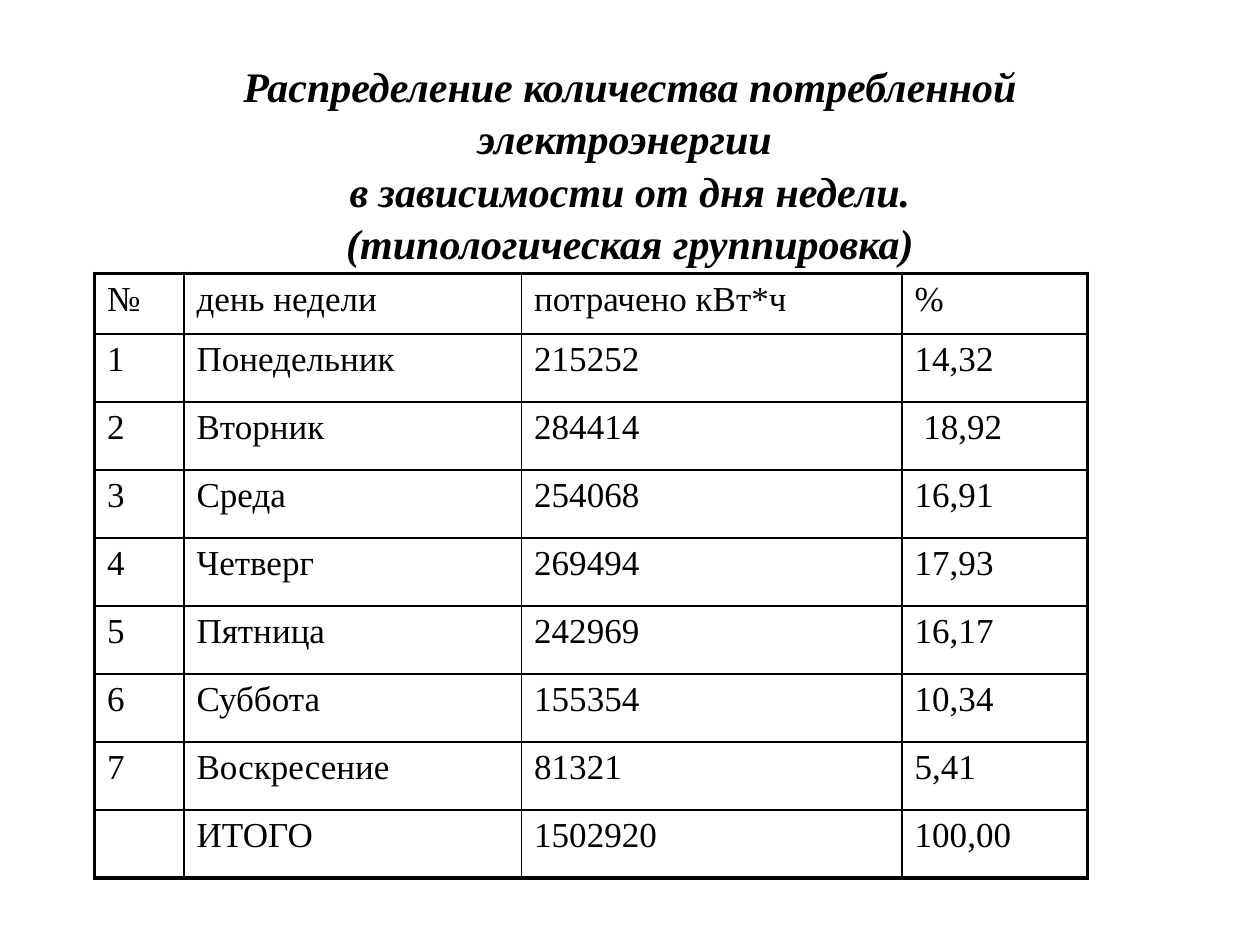
import pptx
import pptx.util
import pptx.dml.color
import pptx.enum.text
from lxml import etree
from pptx.oxml.ns import qn
from pptx.util import Inches, Pt

TITLE_LINES = (
    "Распределение количества потребленной электроэнергии ",
    "в зависимости от дня недели.",
    "(типологическая группировка)",
)
ROWS = [
    ("№", "день недели", "потрачено кВт*ч", "%"),
    ("1", "Понедельник", "215252", "14,32"),
    ("2", "Вторник", "284414", " 18,92"),
    ("3", "Среда", "254068", "16,91"),
    ("4", "Четверг", "269494", "17,93"),
    ("5", "Пятница", "242969", "16,17"),
    ("6", "Суббота", "155354", "10,34"),
    ("7", "Воскресение", "81321", "5,41"),
    ("", "ИТОГО", "1502920", "100,00"),
]
COLUMN_WIDTHS = (0.71, 2.68, 3.02, 1.47)
HEADER_HEIGHT, DAY_HEIGHT = 0.48, 0.54
OUTER_LINE, INNER_LINE = 2.25, 1
COLORS = {"ink": "000000"}
FONT = "Times New Roman"


def style_font(font, size):
    font.name = FONT
    font.size = Pt(size)
    font.color.rgb = pptx.dml.color.RGBColor.from_string(COLORS["ink"])


def set_borders(cell, widths):
    """Draw cell borders; widths maps the side letters L, R, T, B to points."""
    properties = cell._tc.get_or_add_tcPr()
    for position, (side, width) in enumerate(widths.items()):
        line = etree.Element(qn(f"a:ln{side}"), w=str(int(Pt(width))))
        fill = etree.SubElement(line, qn("a:solidFill"))
        etree.SubElement(fill, qn("a:srgbClr"), val=COLORS["ink"])
        properties.insert(position, line)


def add_title(slide):
    title = slide.shapes.title
    title.left, title.top = Inches(0.75), Inches(0.67)
    title.width, title.height = Inches(8.5), Inches(1.25)
    frame = title.text_frame
    frame.auto_size = pptx.enum.text.MSO_AUTO_SIZE.NONE
    frame.vertical_anchor = pptx.enum.text.MSO_ANCHOR.MIDDLE
    frame.text = "\v".join(TITLE_LINES)
    heading = frame.paragraphs[0]
    heading.alignment = pptx.enum.text.PP_ALIGN.CENTER
    heading.line_spacing = 1.04
    style_font(heading.font, 24)
    heading.font.bold = heading.font.italic = True


def add_consumption_table(slide):
    heights = [HEADER_HEIGHT] + [DAY_HEIGHT] * (len(ROWS) - 1)
    table = slide.shapes.add_table(
        len(ROWS), len(COLUMN_WIDTHS), Inches(0.75), Inches(2.17),
        Inches(sum(COLUMN_WIDTHS)), Inches(sum(heights))).table
    table.first_row = table.horz_banding = False
    for column, width in zip(table.columns, COLUMN_WIDTHS):
        column.width = Inches(width)
    for row, height in zip(table.rows, heights):
        row.height = Inches(height)

    last_row, last_column = len(ROWS) - 1, len(COLUMN_WIDTHS) - 1
    for r, values in enumerate(ROWS):
        for c, value in enumerate(values):
            cell = table.cell(r, c)
            cell.text = value
            style_font(cell.text_frame.paragraphs[0].font, 20)
            cell.fill.background()
            on_edge = {"L": c == 0, "R": c == last_column,
                       "T": r == 0, "B": r == last_row}
            set_borders(cell, {side: OUTER_LINE if outer else INNER_LINE
                               for side, outer in on_edge.items()})


def main():
    deck = pptx.Presentation()
    deck.slide_width, deck.slide_height = Inches(10), Inches(7.5)
    slide = deck.slides.add_slide(deck.slide_layouts.get_by_name("Title Only"))
    add_title(slide)
    add_consumption_table(slide)
    deck.save("out.pptx")


if __name__ == "__main__":
    main()
